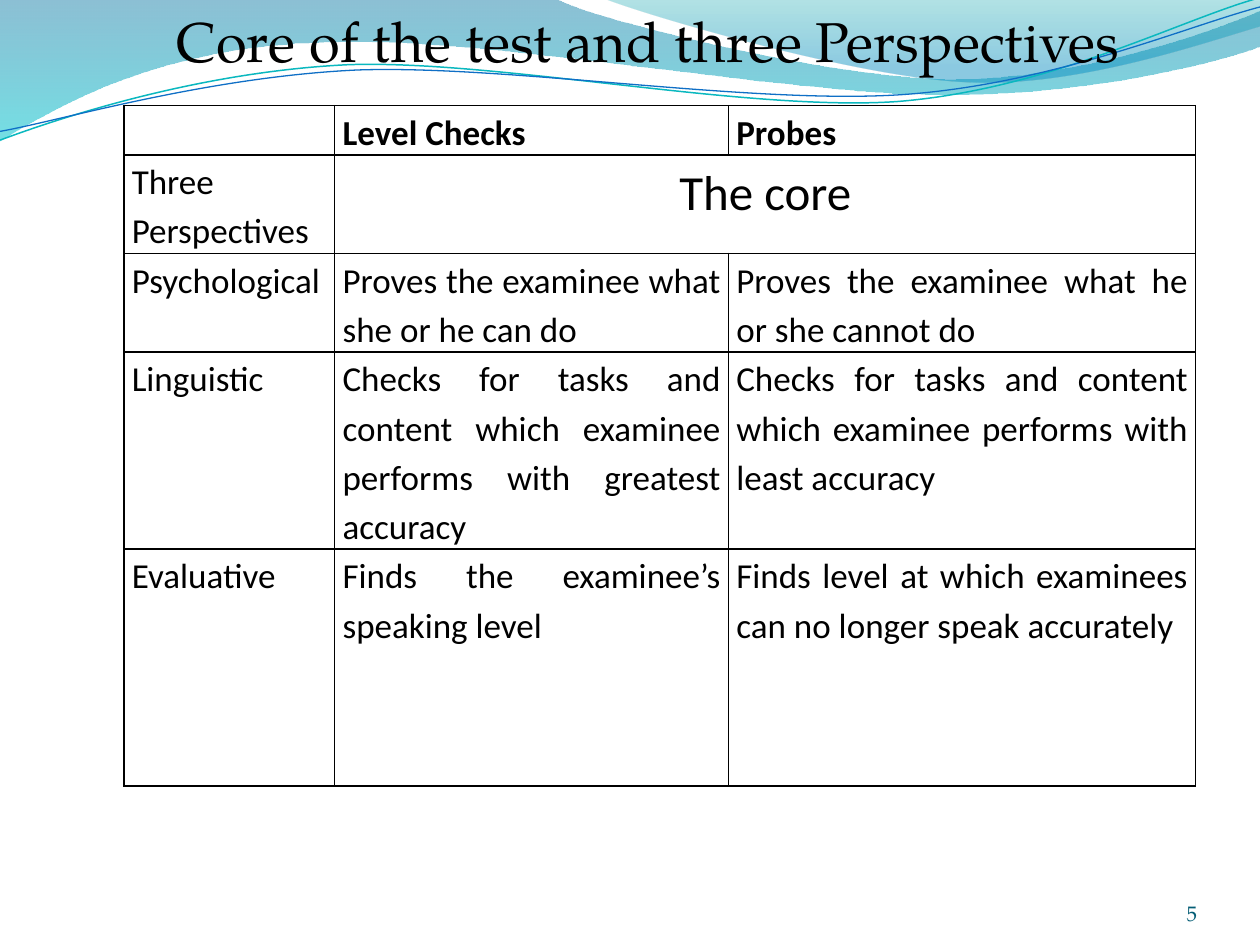
import lxml.etree
import pptx
import pptx.dml.color
import pptx.enum.text
import pptx.oxml
import pptx.oxml.ns
import pptx.util

Pt = pptx.util.Pt
qn = pptx.oxml.ns.qn
ALIGN = pptx.enum.text.PP_ALIGN
ANCHOR = pptx.enum.text.MSO_ANCHOR
HEADING_FONT = "TeX Gyre Pagella"
STRAND_ROTATION = 357.3

BANDS = [
    ((0, 0),
     [(317, -1), (343, 12, 478, 45, 546, 45), (614, 45, 690, 19, 720, 6),
      (721, 26), (708, 32, 626, 55, 537, 54), (447, 54, 275, 20, 185, 24),
      (93, 26, 33, 60, -1, 81)],
     [(0, "0074A1", 45), (1, "00C6CF", 55)]),
    ((345, -1),
     [(367, 8, 491, 45, 554, 47), (616, 50, 692, 23, 720, 15), (720, 0)],
     [(0, "00A1A9", 30), (0.8, "008BBF", 45)]),
]
STRANDS = [
    ((-1.4, 63.1),
     [(34.2, 51.7, 114.3, 29.4, 199.4, 29.4),
      (284.4, 30.5, 425.8, 67.2, 512, 65.2),
      (599.3, 62.3, 676.1, 25.9, 720.6, 15.9)],
     "0AB8BF", 0.85),
    ((-1.1, 58.1),
     [(33.2, 53.7, 118.2, 32.6, 204.3, 32.7),
      (290.3, 33.7, 429.1, 63.3, 515.3, 61.4),
      (601.5, 59.4, 678.9, 30, 721.4, 21)],
     "0F6FC6", 0.75),
]
COLUMN_WIDTHS = [120.5, 225, 267]
ROW_HEIGHTS = [24.5, 34, 45, 67.5, 135.5]
PERSPECTIVES = [
    ["", "Level Checks", "Probes"],
    ["Three Perspectives", "The core", ""],
    ["Psychological", "Proves the examinee what she or he can do",
     "Proves the examinee what he or she cannot do"],
    ["Linguistic",
     "Checks for tasks and content which examinee performs with greatest accuracy",
     "Checks for tasks and content which examinee performs with least accuracy"],
    ["Evaluative", "Finds the examinee’s speaking level",
     "Finds level at which examinees can no longer speak accurately"],
]


def color(hex_value):
    return pptx.dml.color.RGBColor.from_string(hex_value)


def style_paragraph(paragraph, font_name, size, hex_value, alignment, bold=False):
    paragraph.alignment = alignment
    font = paragraph.font
    font.name, font.size, font.bold = font_name, Pt(size), bold
    font.color.rgb = color(hex_value)


def set_margins(target, horizontal, vertical):
    target.margin_left = target.margin_right = Pt(horizontal)
    target.margin_top = target.margin_bottom = Pt(vertical)


def add_outline(slide, left, top, start, segments, close):
    def place(x, y):
        return Pt(left + x), Pt(top + y)

    builder = slide.shapes.build_freeform(*place(*start))
    builder.add_line_segments([place(*segment[-2:]) for segment in segments], close=close)
    outline = builder.convert_to_shape()
    outline.shadow.inherit = False
    for step, segment in zip(outline.element.xpath(".//a:path/a:lnTo"), segments):
        if len(segment) == 2:
            continue
        curve = lxml.etree.Element(qn("a:cubicBezTo"))
        for index in (0, 2, 4):
            x, y = place(*segment[index:index + 2])
            lxml.etree.SubElement(curve, qn("a:pt"), x=str(x - outline.left),
                                  y=str(y - outline.top))
        step.getparent().replace(step, curve)
    return outline


def add_waves(slide, left, top):
    for start, segments, stops in BANDS:
        band = add_outline(slide, left, top, start, segments, True)
        band.line.fill.background()
        band.fill.gradient()
        band.fill.gradient_angle = 270
        for stop, (position, hex_value, _) in zip(band.fill.gradient_stops, stops):
            stop.position = position
            stop.color.rgb = color(hex_value)
        stop_colors = band.element.xpath(".//a:gs/a:srgbClr")
        for stop_color, (_, _, opacity) in zip(stop_colors, stops):
            lxml.etree.SubElement(stop_color, qn("a:alpha"), val=str(opacity * 1000))
    for start, segments, hex_value, width in STRANDS:
        strand = add_outline(slide, left, top, start, segments, False)
        strand.rotation = STRAND_ROTATION
        strand.fill.background()
        strand.line.color.rgb = color(hex_value)
        strand.line.width = Pt(width)


def add_borders(cell, hex_value, width):
    properties = cell._tc.get_or_add_tcPr()
    for side in ("lnL", "lnR", "lnT", "lnB"):
        properties.append(pptx.oxml.parse_xml(
            f'<a:{side} {pptx.oxml.ns.nsdecls("a")} w="{Pt(width)}">'
            f'<a:solidFill><a:srgbClr val="{hex_value}"/></a:solidFill></a:{side}>'))


def add_perspectives_table(slide, left, top, width, height):
    table = slide.shapes.add_table(len(ROW_HEIGHTS), len(COLUMN_WIDTHS),
                                   Pt(left), Pt(top), Pt(width), Pt(height)).table
    table.first_row = table.horz_banding = False
    for column, share in zip(table.columns, COLUMN_WIDTHS):
        column.width = Pt(width * share / sum(COLUMN_WIDTHS))
    for row, row_height in zip(table.rows, ROW_HEIGHTS):
        row.height = Pt(row_height)
    table.cell(1, 1).merge(table.cell(1, 2))
    for row_index, texts in enumerate(PERSPECTIVES):
        for column_index, text in enumerate(texts):
            cell = table.cell(row_index, column_index)
            add_borders(cell, "000000", 1)
            cell.fill.background()
            set_margins(cell, 4.5, 0)
            if not text:
                continue
            cell.text = text
            paragraph = cell.text_frame.paragraphs[0]
            paragraph.line_spacing = 1.15
            is_core = text == "The core"
            style_paragraph(paragraph, "Calibri", 28 if is_core else 20, "000000",
                            ALIGN.CENTER if is_core else ALIGN.JUSTIFY,
                            bold=row_index == 0)


def place_title(slide, left, top, width, height):
    title = slide.shapes.title
    title.left, title.top, title.width, title.height = map(Pt, (left, top, width, height))
    frame = title.text_frame
    frame.text = "Core of the test and three Perspectives"
    frame.word_wrap = True
    frame.auto_size = pptx.enum.text.MSO_AUTO_SIZE.NONE
    frame.vertical_anchor = ANCHOR.TOP
    set_margins(frame, 7.2, 3.6)
    style_paragraph(frame.paragraphs[0], HEADING_FONT, 32, "000000", ALIGN.LEFT)
    title.element.getparent().append(title.element)


def add_page_number(slide, left, top, width, height):
    frame = slide.shapes.add_textbox(*map(Pt, (left, top, width, height))).text_frame
    frame.text = "5"
    frame.word_wrap = True
    frame.vertical_anchor = ANCHOR.BOTTOM
    set_margins(frame, 0, 0)
    style_paragraph(frame.paragraphs[0], HEADING_FONT, 12, "045D75", ALIGN.RIGHT)


def main():
    presentation = pptx.Presentation()
    presentation.slide_width, presentation.slide_height = Pt(720), Pt(540)
    slide = presentation.slides.add_slide(presentation.slide_layouts[5])
    add_waves(slide, 0, 0)
    add_perspectives_table(slide, 70.8, 60.3, 612.5, 384)
    place_title(slide, 93.6, 0, 566.6, 46)
    add_page_number(slide, 624, 500, 60, 28.8)
    presentation.save("out.pptx")


if __name__ == "__main__":
    main()
